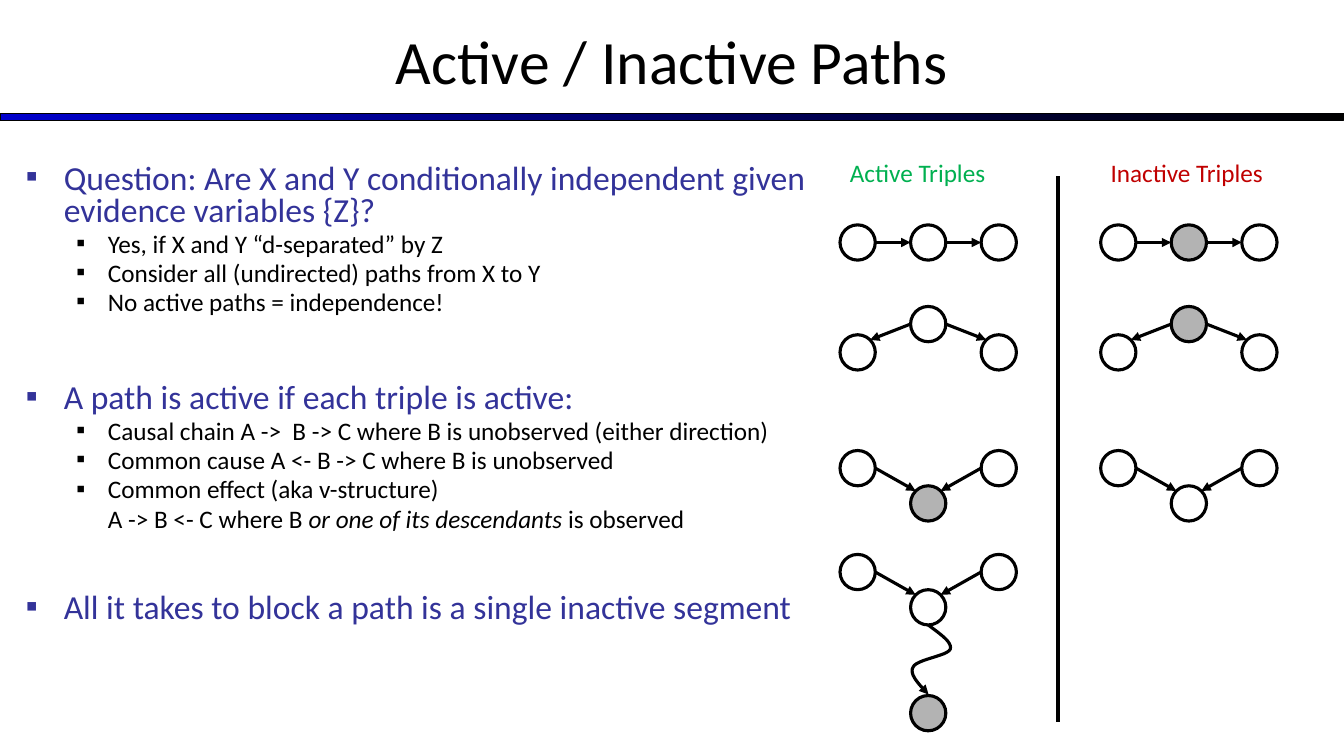
import math
from dataclasses import dataclass

import pptx
import pptx.dml.color
import pptx.enum.shapes
import pptx.enum.text
import pptx.util
from pptx.oxml.ns import qn
from lxml import etree

Pt = pptx.util.Pt
RGB = pptx.dml.color.RGBColor.from_string
SHAPE = pptx.enum.shapes.MSO_SHAPE
STRAIGHT = pptx.enum.shapes.MSO_CONNECTOR.STRAIGHT
ANCHOR = pptx.enum.text.MSO_ANCHOR
ALIGN = pptx.enum.text.PP_ALIGN


@dataclass(frozen=True)
class Theme:
    font: str = "Calibri"
    black: str = "000000"
    white: str = "FFFFFF"
    blue: str = "0000CC"
    lead: str = "333399"
    seen: str = "B3B3B3"
    green: str = "00B050"
    red: str = "C00000"
    title: float = 44
    head: float = 24
    text: float = 18
    thin: float = 0.75
    edge: float = 2.25
    wall: float = 3


THEME = Theme()
NODE = 25.2          # circle diameter
STEP = 2 * NODE      # distance between circle columns
DIAG = NODE / 2 * math.sqrt(0.5)

# (level, bullet, space before, runs as (text, italic))
POINTS = [
    (0, True, 4.8, [("Question: Are X and Y conditionally independent given "
                     "evidence variables {Z}?", False)]),
    (1, True, 3.6, [("Yes, if X and Y “d-separated” by Z", False)]),
    (1, True, 3.6, [("Consider all (undirected) paths from X to Y", False)]),
    (1, True, 3.6, [("No active paths = independence!", False)]),
    (0, True, 48, [("A path is active if each triple is active:", False)]),
    (1, True, 3.6, [("Causal chain A ->  B -> C where B is unobserved "
                     "(either direction)", False)]),
    (1, True, 3.6, [("Common cause A <- B -> C where B is unobserved", False)]),
    (1, True, 3.6, [("Common effect (aka v-structure)", False)]),
    (1, False, 3.6, [("A -> B <- C where B ", False),
                     ("or one of its descendants", True),
                     (" is observed", False)]),
    (0, True, 43.5, [("All it takes to block a path is a single inactive "
                      "segment", False)]),
]

# (top, drop of the middle circle, arrows point to the middle on the left side)
CHAIN = (160.6, 0)
FORK = (218.9, -20.2)
MEET = (321.8, NODE)
TAIL = (396, NODE)


def add_box(slide, x, y, w, h):
    frame = slide.shapes.add_textbox(Pt(x), Pt(y), Pt(w), Pt(h)).text_frame
    frame.word_wrap = True
    return frame


def set_font(para, size, color):
    para.font.name = THEME.font
    para.font.size = Pt(size)
    para.font.color.rgb = RGB(color)


def add_label(slide, x, y, w, h, text, size, color, align=ALIGN.LEFT):
    frame = add_box(slide, x, y, w, h)
    frame.vertical_anchor = ANCHOR.MIDDLE
    para = frame.paragraphs[0]
    para.text = text
    para.alignment = align
    set_font(para, size, color)


def add_rule(slide, x, y, w, h):
    """Draw the bar under the title, fading from blue to black."""
    bar = slide.shapes.add_shape(SHAPE.RECTANGLE, Pt(x), Pt(y), Pt(w), Pt(h))
    bar.shadow.inherit = False
    bar.fill.gradient()
    bar.fill.gradient_angle = 0
    for stop, color in zip(bar.fill.gradient_stops, (THEME.blue, THEME.black)):
        stop.color.rgb = RGB(color)
    bar.line.color.rgb = RGB(THEME.black)
    bar.line.width = Pt(THEME.thin)


def set_bullet(para, level, shown, color):
    left, hang = ((27, 27), (58.5, 22.5))[level]
    props = para._p.get_or_add_pPr()
    props.set("marL", str(Pt(left)))
    props.set("indent", str(-Pt(hang) if shown else 0))
    if not shown:
        etree.SubElement(props, qn("a:buNone"))
        return
    tint = etree.SubElement(props, qn("a:buClr"))
    etree.SubElement(tint, qn("a:srgbClr"), val=color)
    etree.SubElement(props, qn("a:buFont"), typeface="Wingdings")
    props[-1].set("typeface", THEME.font)
    etree.SubElement(props, qn("a:buChar"), char="▪")


def add_points(slide, x, y, w, h):
    frame = add_box(slide, x, y, w, h)
    for i, (level, shown, gap, runs) in enumerate(POINTS):
        para = frame.add_paragraph() if i else frame.paragraphs[0]
        color = (THEME.lead, THEME.black)[level]
        para.level = level
        para.line_spacing = 0.8
        para.space_before = Pt(gap)
        set_bullet(para, level, shown, color)
        set_font(para, (THEME.head, THEME.text)[level], color)
        for text, slant in runs:
            run = para.add_run()
            run.text = text
            if slant:
                run.font.italic = True


def set_line(shape, width, arrow=False):
    shape.line.color.rgb = RGB(THEME.black)
    shape.line.width = Pt(width)
    if arrow:
        etree.SubElement(shape.line._get_or_add_ln(), qn("a:tailEnd"),
                         type="triangle")


def add_line(shapes, start, end, width, arrow=False):
    line = shapes.add_connector(STRAIGHT, *(Pt(v) for v in (*start, *end)))
    set_line(line, width, arrow)
    etree.SubElement(line._element.spPr, qn("a:effectLst"))


def add_node(shapes, x, y, seen=False):
    """Draw a circle centred on x, y; grey means observed."""
    node = shapes.add_shape(SHAPE.OVAL, Pt(x - NODE / 2), Pt(y - NODE / 2),
                            Pt(NODE), Pt(NODE))
    node.shadow.inherit = False
    node.fill.solid()
    node.fill.fore_color.rgb = RGB(THEME.seen if seen else THEME.white)
    set_line(node, THEME.edge)


def add_triple(slide, x, y, drop, seen=False):
    """Draw three nodes in a box at x, y; the middle one sits drop lower."""
    shapes = slide.shapes.add_group_shape().shapes
    r = NODE / 2
    mid = x + r + STEP
    side = y + r + max(0, -drop)
    core = y + r + max(0, drop)
    for col in (-1, 0, 1):
        add_node(shapes, mid + col * STEP, side if col else core,
                 seen and not col)
    for col in (-1, 1):
        far = mid + col * STEP
        inner, outer = (mid + col * r, core), (far - col * r, side)
        if drop < 0:
            ends = inner, (far - col * DIAG, side - DIAG)
        elif drop > 0:
            ends = outer, (mid + col * DIAG, core - DIAG)
        else:
            ends = (outer, inner) if col < 0 else (inner, outer)
        add_line(shapes, *ends, THEME.edge, arrow=True)
    return shapes


def add_heir(shapes, x, y):
    """Draw a winding arrow down from x, y to an observed descendant."""
    bends = [((0, 0), (8.6, 6.5), (17.3, 12.2), (15.8, 17.3)),
             ((15.8, 17.3), (13.7, 22.3), (-8.6, 24.5), (-10.8, 30.2)),
             ((-10.8, 30.2), (-13.7, 35.3), (-6.5, 42.5), (0.3, 49.7))]
    spots = []
    for bend in bends:
        for t in (k / 12 for k in range(1, 13)):
            terms = ((1 - t) ** 3, 3 * t * (1 - t) ** 2,
                     3 * t * t * (1 - t), t ** 3)
            dx, dy = (sum(a * b for a, b in zip(terms, axis))
                      for axis in zip(*bend))
            spots.append((Pt(x + dx), Pt(y + dy)))
    pen = shapes.build_freeform(Pt(x), Pt(y))
    pen.add_line_segments(spots, close=False)
    curve = pen.convert_to_shape()
    curve.shadow.inherit = False
    curve.fill.background()
    set_line(curve, THEME.edge, arrow=True)
    add_node(shapes, x, y + STEP + NODE / 2)


def add_active(slide, x, y):
    add_label(slide, x, y, 126, 30, "Active Triples", THEME.text, THEME.green)
    for (top, drop), seen in ((CHAIN, False), (FORK, False), (MEET, True)):
        add_triple(slide, x, top, drop, seen)
    top, drop = TAIL
    shapes = add_triple(slide, x, top, drop)
    add_heir(shapes, x + STEP + NODE / 2, top + drop + NODE)
    shapes[-1].fill.fore_color.rgb = RGB(THEME.seen)


def add_inert(slide, x, y):
    """Draw the column of inactive triples."""
    add_label(slide, x, y, 138, 30, "Inactive Triples", THEME.text, THEME.red)
    for (top, drop), seen in ((CHAIN, True), (FORK, True), (MEET, False)):
        add_triple(slide, x, top, drop, seen)


def main():
    deck = pptx.Presentation()
    deck.slide_width, deck.slide_height = Pt(960), Pt(540)
    slide = deck.slides.add_slide(deck.slide_layouts[6])
    add_rule(slide, 0, 81, 960, 5)
    add_label(slide, 0, -2, 960, 90, "Active / Inactive Paths",
              THEME.title, THEME.black, ALIGN.CENTER)
    add_points(slide, 11.5, 113.8, 594.7, 396)
    add_active(slide, 600, 108)
    add_inert(slide, 786.2, 108)
    add_line(slide.shapes, (756, 126), (756, 516), THEME.wall)
    deck.save("out.pptx")


if __name__ == "__main__":
    main()
